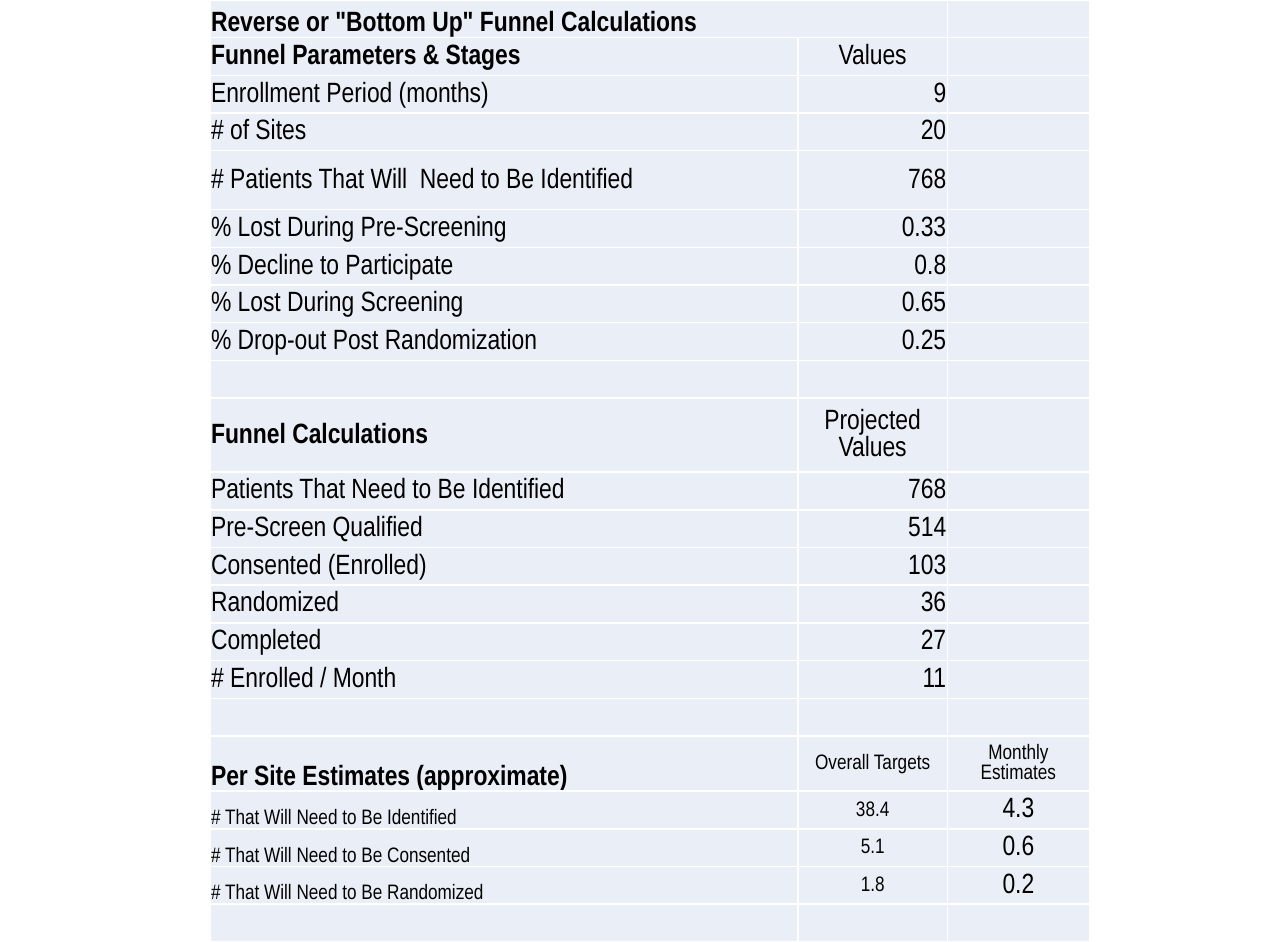
from lxml.etree import SubElement
from pptx import Presentation
from pptx.dml.color import RGBColor
from pptx.enum.text import MSO_ANCHOR as Anchor, PP_ALIGN as Align
from pptx.oxml.ns import qn
from pptx.util import Inches, Pt

# Content: (row kind, cell texts)
ROWS = [
    ("title", ['Reverse or "Bottom Up" Funnel Calculations']),
    ("heading", ["Funnel Parameters & Stages", "Values"]),
    ("value", ["Enrollment Period (months)", "9"]),
    ("value", ["# of Sites", "20"]),
    ("value", ["# Patients That Will  Need to Be Identified", "768"]),
    ("value", ["% Lost During Pre-Screening", "0.33"]),
    ("value", ["% Decline to Participate", "0.8"]),
    ("value", ["% Lost During Screening", "0.65"]),
    ("value", ["% Drop-out Post Randomization", "0.25"]),
    ("blank", []),
    ("heading", ["Funnel Calculations", "Projected Values"]),
    ("value", ["Patients That Need to Be Identified", "768"]),
    ("value", ["Pre-Screen Qualified", "514"]),
    ("value", ["Consented (Enrolled)", "103"]),
    ("value", ["Randomized", "36"]),
    ("value", ["Completed", "27"]),
    ("value", ["# Enrolled / Month", "11"]),
    ("blank", []),
    ("site heading", ["Per Site Estimates (approximate)", "Overall Targets", "Monthly Estimates"]),
    ("site", ["# That Will Need to Be Identified", "38.4", "4.3"]),
    ("site", ["# That Will Need to Be Consented", "5.1", "0.6"]),
    ("site", ["# That Will Need to Be Randomized", "1.8", "0.2"]),
    ("blank", []),
]
COLUMN_WIDTHS = [4.68, 1.19, 1.13]
ROW_HEIGHT = 0.3
TALL_ROWS = {4: 0.47, 10: 0.59, 18: 0.44}

THEME = {
    "font": "Arial Narrow",
    "text": RGBColor(0, 0, 0),
    "fill": RGBColor(0xEA, 0xEF, 0xF7),
    "border": "FFFFFF",
    "large": Pt(16),
    "small": Pt(12),
}

# Formats by row kind, one per column: size, bold, alignment, anchor
LABEL = ("large", False, Align.LEFT, Anchor.MIDDLE)
HEADING = ("large", True, Align.LEFT, Anchor.MIDDLE)
LOW_HEADING = ("large", True, Align.LEFT, Anchor.BOTTOM)
LOW_LABEL = ("small", False, Align.LEFT, Anchor.BOTTOM)
NUMBER = ("large", False, Align.RIGHT, Anchor.MIDDLE)
CENTRED = ("large", False, Align.CENTER, Anchor.MIDDLE)
SMALL_CENTRED = ("small", False, Align.CENTER, Anchor.MIDDLE)
FORMATS = {
    "title": [LOW_HEADING],
    "heading": [HEADING, CENTRED],
    "value": [LABEL, NUMBER],
    "site heading": [LOW_HEADING, SMALL_CENTRED, SMALL_CENTRED],
    "site": [LOW_LABEL, SMALL_CENTRED, CENTRED],
    "blank": [],
}
MARGINS = {
    "margin_left": Inches(0.01),
    "margin_right": Inches(0.01),
    "margin_top": Inches(0.01),
    "margin_bottom": 0,
}


def style_cell(cell):
    """Margins, white borders and fill."""
    for name, value in MARGINS.items():
        setattr(cell, name, value)
    properties = cell._tc.get_or_add_tcPr()
    for side in ("a:lnL", "a:lnR", "a:lnT", "a:lnB"):
        line = SubElement(properties, qn(side), w=str(Pt(1)))
        SubElement(SubElement(line, qn("a:solidFill")), qn("a:srgbClr"), val=THEME["border"])
    cell.fill.solid()
    cell.fill.fore_color.rgb = THEME["fill"]


def write_cell(cell, text, look):
    size, bold, alignment, anchor = look
    cell.vertical_anchor = anchor
    para = cell.text_frame.paragraphs[0]
    para.alignment = alignment
    span = para.add_run()
    span.text = text
    for name, value in {"name": THEME["font"], "size": THEME[size], "bold": bold}.items():
        setattr(span.font, name, value)
    span.font.color.rgb = THEME["text"]


deck = Presentation()
deck.slide_width, deck.slide_height = Inches(10.25), Inches(7.5)
page = deck.slides.add_slide(deck.slide_layouts[6])

# Table frame
heights = [TALL_ROWS.get(index, ROW_HEIGHT) for index in range(len(ROWS))]
table = page.shapes.add_table(
    len(ROWS), len(COLUMN_WIDTHS), Inches(1.67), 0,
    Inches(sum(COLUMN_WIDTHS)), Inches(sum(heights)),
).table
table.first_row = table.horz_banding = False
for column, width in zip(table.columns, COLUMN_WIDTHS):
    column.width = Inches(width)

# Cells
for row, height, (kind, texts) in zip(table.rows, heights, ROWS):
    row.height = Inches(height)
    for cell in row.cells:
        style_cell(cell)
        # Empty cells keep a small type size so that rows hold their height
        end = cell.text_frame.paragraphs[0]._p.get_or_add_endParaRPr()
        end.set("sz", str(int(THEME["small"].pt * 100)))
    for cell, text, look in zip(row.cells, texts, FORMATS[kind]):
        write_cell(cell, text, look)
table.cell(0, 0).merge(table.cell(0, 1))

deck.save("out.pptx")
